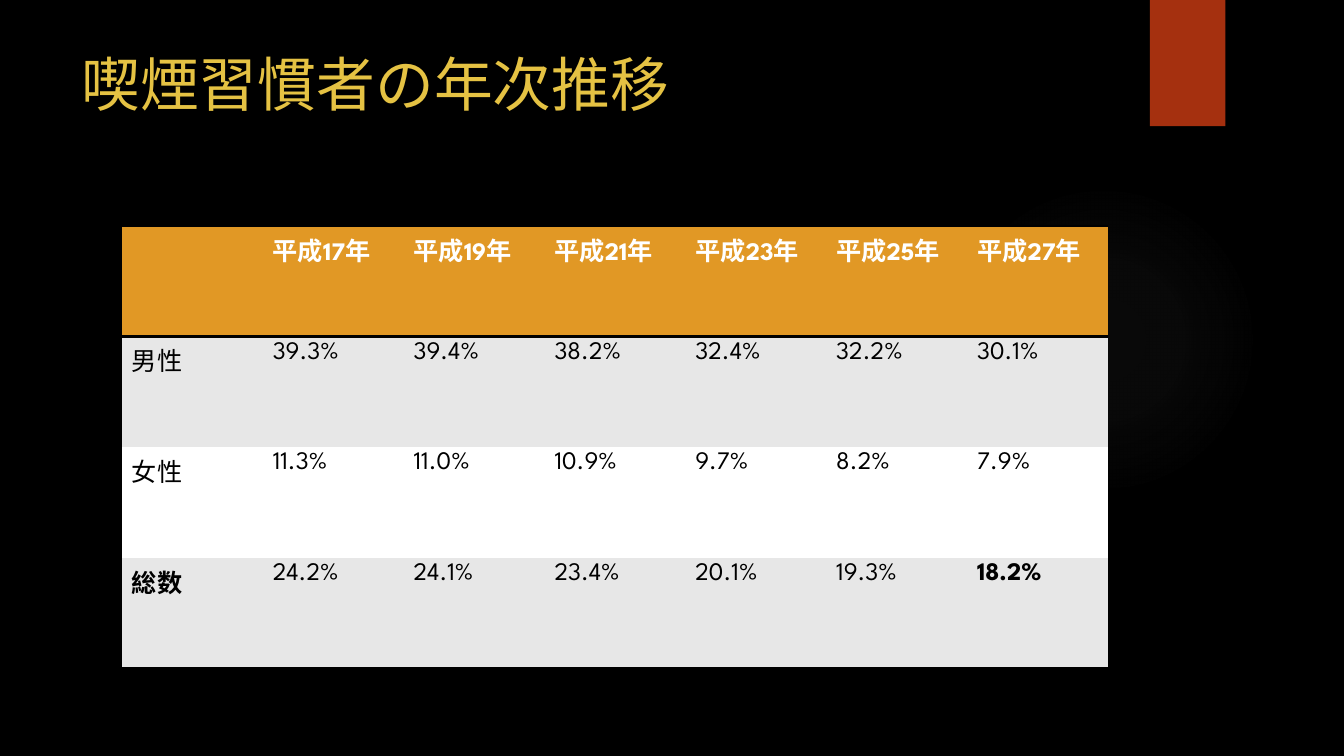
import typing

import lxml.etree
import pptx
import pptx.dml.color
import pptx.enum.shapes
import pptx.oxml
import pptx.oxml.ns
import pptx.util

Cm = pptx.util.Cm
Kind = pptx.enum.shapes.MSO_SHAPE
qn = pptx.oxml.ns.qn
NS = 'xmlns:a="http://schemas.openxmlformats.org/drawingml/2006/main"'
PLAIN = "{2D5ABB26-0587-4C30-8999-92F81FD0307C}"
FACE = "League Spartan"
BLACK, WHITE, GOLD, AMBER = "000000", "FFFFFF", "E5C243", "E19825"
GRAY, RUST, GLOW = "E7E7E7", "A5300F", "848484"


class Box(typing.NamedTuple):
    left: float
    top: float
    width: float
    height: float

    def place(self) -> list:
        return [Cm(side) for side in self]


class Row(typing.NamedTuple):
    cells: list[str]
    fill: str
    ink: str = BLACK
    bold: tuple[int, ...] = ()
    edges: tuple[str, ...] = ()


TITLE = Box(1.8, 1.27, 26.14, 3.89)
FLAG = Box(28.98, 0, 1.9, 3.18)
HALO = Box(23.9, 4.65, 7.82, 7.82)
GRID = Box(3.07, 5.69, 24.85, 11.16)
YEARS = [f"平成{year}年" for year in range(17, 28, 2)]
ROWS = [
    Row(["", *YEARS], AMBER, WHITE, tuple(range(7)), ("T", "B")),
    Row(["男性", "39.3%", "39.4%", "38.2%", "32.4%", "32.2%", "30.1%"], GRAY),
    Row(["女性", "11.3%", "11.0%", "10.9%", "9.7%", "8.2%", "7.9%"], WHITE),
    Row(["総数", "24.2%", "24.1%", "23.4%", "20.1%", "19.3%", "18.2%"],
        GRAY, bold=(0, 6), edges=("B",)),
]


def tint(code: str) -> pptx.dml.color.RGBColor:
    return pptx.dml.color.RGBColor.from_string(code)


def paint(fill, code: str) -> None:
    fill.solid()
    fill.fore_color.rgb = tint(code)


def write(frame, text: str, size: float, ink: str, bold: bool = False) -> None:
    frame.word_wrap = True
    para = frame.paragraphs[0]
    font = para.add_run().font if text else para.font
    if text:
        para.runs[0].text = text
    form = {"name": FACE, "size": pptx.util.Pt(size), "bold": bold}
    for key, value in form.items():
        setattr(font, key, value)
    font.color.rgb = tint(ink)


def draw(slide, kind, box: Box):
    shape = slide.shapes.add_shape(kind, *box.place())
    shape.shadow.inherit = False
    shape.line.fill.background()
    return shape


def add_halo(slide) -> None:
    shape = draw(slide, Kind.OVAL, HALO)
    stops = "".join(
        f'<a:gs pos="{spot * 1000}"><a:srgbClr val="{GLOW}">'
        f'<a:alpha val="{alpha * 1000}"/></a:srgbClr></a:gs>'
        for spot, alpha in ((0, 7), (36, 6), (69, 0), (100, 0)))
    grad = pptx.oxml.parse_xml(
        f'<a:gradFill {NS}><a:gsLst>{stops}</a:gsLst><a:path path="circle">'
        '<a:fillToRect l="50000" t="50000" r="50000" b="50000"/>'
        '</a:path></a:gradFill>')
    shape.element.spPr.find(qn("a:prstGeom")).addnext(grad)


def add_title(slide, text: str) -> None:
    frame = slide.shapes.add_textbox(*TITLE.place()).text_frame
    write(frame, text, 42, GOLD)
    frame.paragraphs[0].line_spacing = 0.9


def add_edges(cell, edges: tuple[str, ...]) -> None:
    props = cell._tc.get_or_add_tcPr()
    for spot, side in enumerate(edges):
        line = lxml.etree.fromstring(
            f'<a:ln{side} {NS} w="25400"><a:solidFill><a:srgbClr val="{BLACK}"/>'
            f'</a:solidFill></a:ln{side}>')
        props.insert(spot, line)


def add_grid(slide) -> None:
    frame = slide.shapes.add_table(len(ROWS), len(ROWS[0].cells), *GRID.place())
    table = frame.table
    table.first_row = table.horz_banding = False
    table._tbl.tblPr.find(qn("a:tableStyleId")).text = PLAIN
    for line, row in enumerate(ROWS):
        for col, text in enumerate(row.cells):
            cell = table.cell(line, col)
            paint(cell.fill, row.fill)
            write(cell.text_frame, text, 18, row.ink, col in row.bold)
            add_edges(cell, row.edges)


def main() -> None:
    deck = pptx.Presentation()
    deck.slide_width, deck.slide_height = Cm(33.87), Cm(19.05)
    slide = deck.slides.add_slide(deck.slide_layouts[6])
    paint(slide.background.fill, BLACK)
    add_halo(slide)
    paint(draw(slide, Kind.RECTANGLE, FLAG).fill, RUST)
    add_title(slide, "喫煙習慣者の年次推移")
    add_grid(slide)
    deck.save("out.pptx")


if __name__ == "__main__":
    main()
